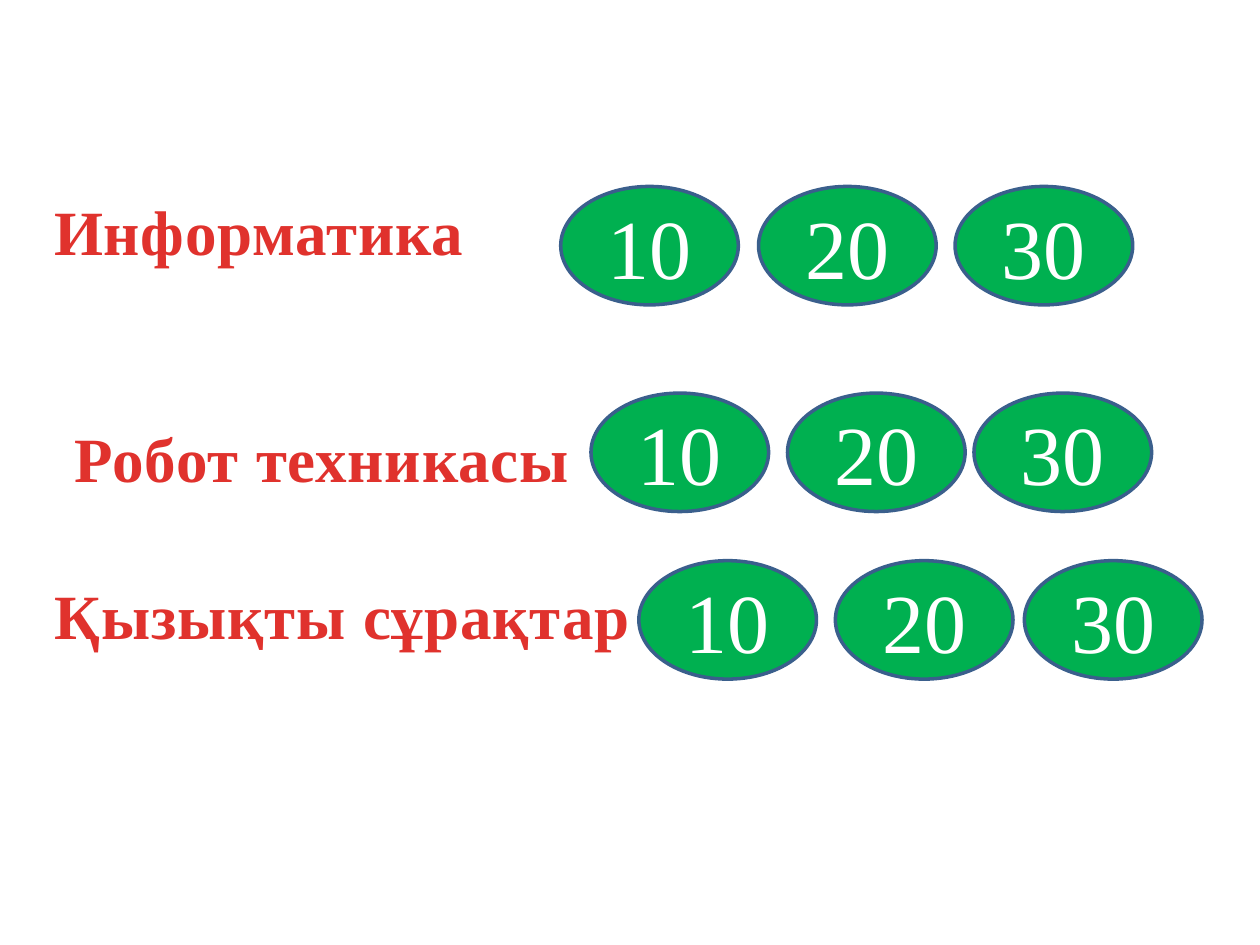
from pptx import Presentation
from pptx.dml.color import RGBColor
from pptx.enum import shapes, text
from pptx.util import Inches, Pt


def color(value):
    return RGBColor.from_string(value)


def add_span(shape, words, size):
    """Write one centred run into the shape and return its font."""
    para = shape.text_frame.paragraphs[0]
    para.alignment = text.PP_ALIGN.CENTER
    span = para.add_run()
    span.text = words
    span.font.name = "Times New Roman"
    span.font.size = Pt(size)
    return span.font


deck = Presentation()
deck.slide_width, deck.slide_height = Inches(10), Inches(7.5)
page = deck.slides.add_slide(deck.slide_layouts[6])

# topic, label left, top and width, ovals' top and lefts
rows = [
    ("Информатика", 0.31, 1.48, 3.49, 1.48, (4.45, 6.02, 7.58)),
    ("Робот техникасы", 0.47, 3.28, 4.17, 3.12, (4.69, 6.25, 7.73)),
    ("Қызықты сұрақтар", 0.31, 4.53, 4.82, 4.45, (5.07, 6.63, 8.13)),
]

for topic, left, top, width, oval_top, oval_lefts in rows:
    label = page.shapes.add_textbox(Inches(left), Inches(top), Inches(width), Inches(0.71))
    label.text_frame.word_wrap = False
    label.text_frame.auto_size = text.MSO_AUTO_SIZE.SHAPE_TO_FIT_TEXT
    font = add_span(label, topic, 36)
    font.bold = True
    font.fill.gradient()
    font.fill.gradient_angle = 270
    for stop, position, shade in zip(font.fill.gradient_stops, (0.25, 1), ("E0322D", "A2201C")):
        stop.position = position
        stop.color.rgb = color(shade)
    font._element.set("spc", "50")

    for points, oval_left in zip((10, 20, 30), oval_lefts):
        oval = page.shapes.add_shape(
            shapes.MSO_SHAPE.OVAL, Inches(oval_left), Inches(oval_top), Inches(1.41), Inches(0.94))
        oval.shadow.inherit = False
        oval.fill.solid()
        oval.fill.fore_color.rgb = color("00B050")
        oval.line.color.rgb = color("3A5F8C")
        oval.line.width = Pt(2)
        oval.text_frame.vertical_anchor = text.MSO_ANCHOR.MIDDLE
        add_span(oval, str(points), 48).color.rgb = color("FFFFFF")

deck.save("out.pptx")
